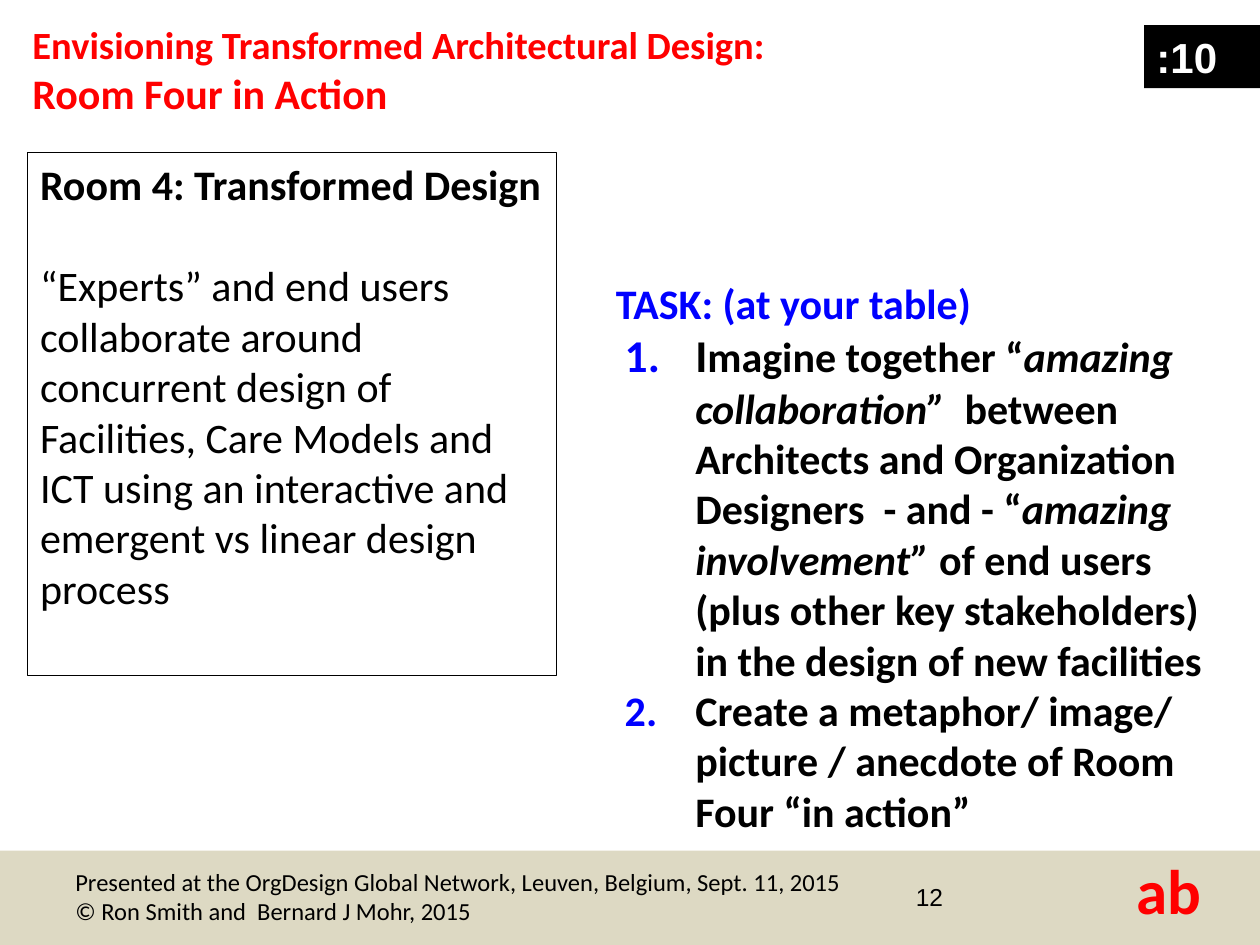
from lxml.etree import SubElement
from pptx import Presentation
from pptx.dml.color import RGBColor
from pptx.enum.shapes import MSO_SHAPE
from pptx.enum.text import MSO_ANCHOR, PP_ALIGN
from pptx.oxml.ns import qn
from pptx.util import Pt


def color(value):
    return RGBColor.from_string(value)


def add_box(left, top, width, height, paragraphs, fill=None, line=None):
    shape = slide.shapes.add_shape(
        MSO_SHAPE.RECTANGLE, Pt(left), Pt(top), Pt(width), Pt(height))
    shape.shadow.inherit = False
    if fill:
        shape.fill.solid()
        shape.fill.fore_color.rgb = color(fill)
    else:
        shape.fill.background()
    if line:
        shape.line.color.rgb = color(line)
        shape.line.width = Pt(0.75)
    else:
        shape.line.fill.background()
    frame = shape.text_frame
    frame.word_wrap = True
    frame.vertical_anchor = MSO_ANCHOR.TOP
    for index, runs in enumerate(paragraphs):
        paragraph = frame.add_paragraph() if index else frame.paragraphs[0]
        paragraph.alignment = PP_ALIGN.LEFT
        for text, size, font, hex_color, bold, italic in runs:
            run = paragraph.add_run()
            run.text = text
            run.font.size = Pt(size)
            run.font.name = font
            run.font.color.rgb = color(hex_color)
            run.font.bold = bold
            run.font.italic = italic
    return shape


presentation = Presentation()
presentation.slide_width = Pt(720)
presentation.slide_height = Pt(540)
slide = presentation.slides.add_slide(presentation.slide_layouts[6])

black, red, blue, white = "000000", "FF0000", "0000FF", "FFFFFF"

add_box(0, 486, 720, 54, [], fill="DDD9C3")
add_box(642.24, 483.12, 59.76, 51.12, [[("ab", 36, "Calibri", red, True, False)]])
footer_lines = [
    "Presented at the OrgDesign Global Network, Leuven, Belgium, Sept. 11, 2015",
    "© Ron Smith and  Bernard J Mohr, 2015",
]
add_box(36, 491.76, 576, 41.76,
        [[(text, 14, "Calibri", black, False, False)] for text in footer_lines])
add_box(516.24, 500.4, 167.76, 28.8, [[("12", 14, "Arial", black, False, False)]])

add_box(11.52, 8.64, 648, 90, [
    [("Envisioning Transformed Architectural Design:", 22, "Calibri", red, True, False)],
    [("Room Four in Action", 24, "Calibri", red, True, False)],
])

room = add_box(15.84, 87.12, 302.4, 298.8, [
    [("Room 4: Transformed Design", 24, "Calibri", black, True, False)],
    [("“Experts” and end users collaborate around concurrent design of  Facilities, "
      "Care Models and ICT using an interactive and emergent vs linear design process",
      24, "Calibri", black, False, False)],
], line=black)
room.text_frame.paragraphs[1].space_before = Pt(29)

task = add_box(344.88, 154.8, 360, 341.28, [
    [("TASK: (at your table)", 24, "Calibri", blue, True, False)],
    [
        ("I", 26, "Calibri", black, True, False),
        ("magine together “", 24, "Calibri", black, True, False),
        ("amazing collaboration” ", 24, "Calibri", black, True, True),
        (" between Architects and Organization Designers  - and - “",
         24, "Calibri", black, True, False),
        ("amazing involvement” ", 24, "Calibri", black, True, True),
        ("of end users (plus other key stakeholders) in the design of new facilities",
         24, "Calibri", black, True, False),
    ],
    [("Create a metaphor/ image/ picture / anecdote of Room Four “in action”",
      24, "Calibri", black, True, False)],
])
for paragraph in task.text_frame.paragraphs[1:]:
    properties = paragraph._p.get_or_add_pPr()
    properties.set("marL", str(Pt(45.36)))
    properties.set("indent", str(-Pt(40.32)))
    bullet_color = SubElement(properties, qn("a:buClr"))
    SubElement(bullet_color, qn("a:srgbClr"), val=blue)
    SubElement(properties, qn("a:buFont"), typeface="+mj-lt")
    SubElement(properties, qn("a:buAutoNum"), type="arabicPeriod")

add_box(653.76, 14.4, 66.24, 36, [[(":10", 24, "Arial", white, True, False)]], fill=black)

presentation.save("out.pptx")
